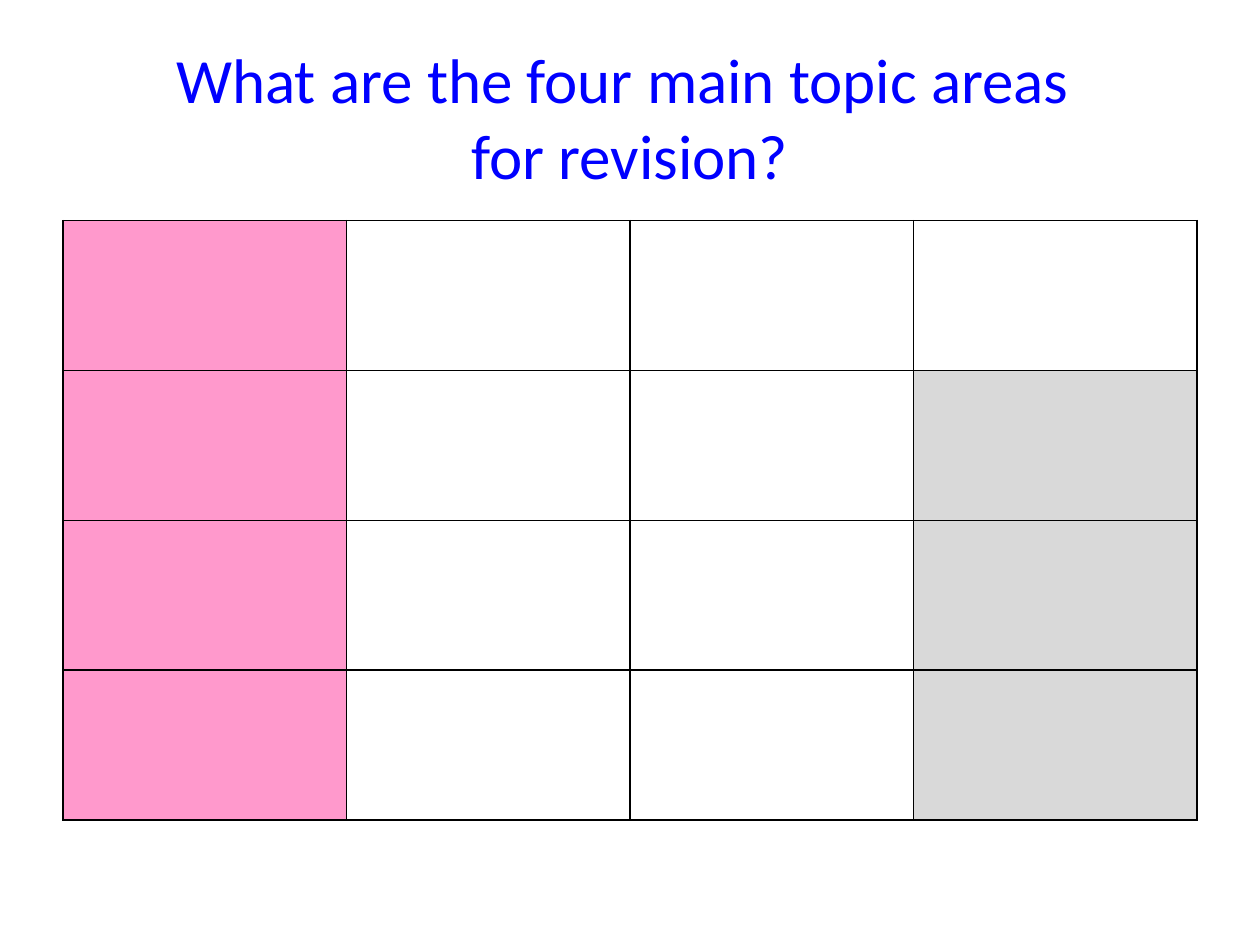
"""Build a revision slide with a title and an empty four-by-four topic grid."""
from dataclasses import dataclass

from lxml.etree import SubElement
from pptx import Presentation
from pptx.dml.color import RGBColor
from pptx.enum.text import MSO_ANCHOR, PP_ALIGN
from pptx.oxml.ns import qn
from pptx.table import _Cell
from pptx.text.text import TextFrame
from pptx.util import Pt

PINK, GREY, BLACK, BLUE = "FF99CC", "D9D9D9", "000000", "0000FF"


@dataclass
class Box:
    left: float
    top: float
    width: float
    height: float

    def emu(self) -> tuple:
        return Pt(self.left), Pt(self.top), Pt(self.width), Pt(self.height)


@dataclass
class TopicRow:
    fills: tuple


TITLE_BOX = Box(36, 21.6, 648, 90)
GRID_BOX = Box(36, 126, 648, 342.72)
TOPIC_ROWS = [TopicRow((PINK, None, None, None))] + [TopicRow((PINK, None, None, GREY))] * 3


def color(value: str) -> RGBColor:
    return RGBColor.from_string(value)


def write(tf: TextFrame, text: str, *, size: float, fill: str, font: str = "Calibri",
          align: PP_ALIGN = PP_ALIGN.CENTER, anchor: MSO_ANCHOR = MSO_ANCHOR.MIDDLE) -> None:
    tf.text = text
    tf.word_wrap = True
    tf.vertical_anchor = anchor
    for p in tf.paragraphs:
        p.alignment = align
        for r in p.runs:
            r.font.name, r.font.size = font, Pt(size)
            r.font.color.rgb = color(fill)


def draw_cell(cell: _Cell, fill: str | None) -> None:
    tc_pr = cell._tc.get_or_add_tcPr()
    for side in ("lnL", "lnR", "lnT", "lnB"):
        ln = SubElement(tc_pr, qn(f"a:{side}"), w=str(Pt(1)))
        SubElement(SubElement(ln, qn("a:solidFill")), qn("a:srgbClr"), val=BLACK)
    if fill:
        cell.fill.solid()
        cell.fill.fore_color.rgb = color(fill)
    else:
        cell.fill.background()


def draw_grid(shapes, box: Box, rows: list[TopicRow]) -> None:
    table = shapes.add_table(len(rows), len(rows[0].fills), *box.emu()).table
    table.first_row = table.horz_banding = False
    for i, row in enumerate(rows):
        for j, fill in enumerate(row.fills):
            draw_cell(table.cell(i, j), fill)


def main() -> None:
    prs = Presentation()
    prs.slide_width, prs.slide_height = Pt(720), Pt(540)
    s = prs.slides.add_slide(prs.slide_layouts[5])
    sp = s.shapes.title
    sp.left, sp.top, sp.width, sp.height = TITLE_BOX.emu()
    write(sp.text_frame, "What are the four main topic areas \vfor revision?", size=36, fill=BLUE)
    draw_grid(s.shapes, GRID_BOX, TOPIC_ROWS)
    prs.save("out.pptx")


if __name__ == "__main__":
    main()
